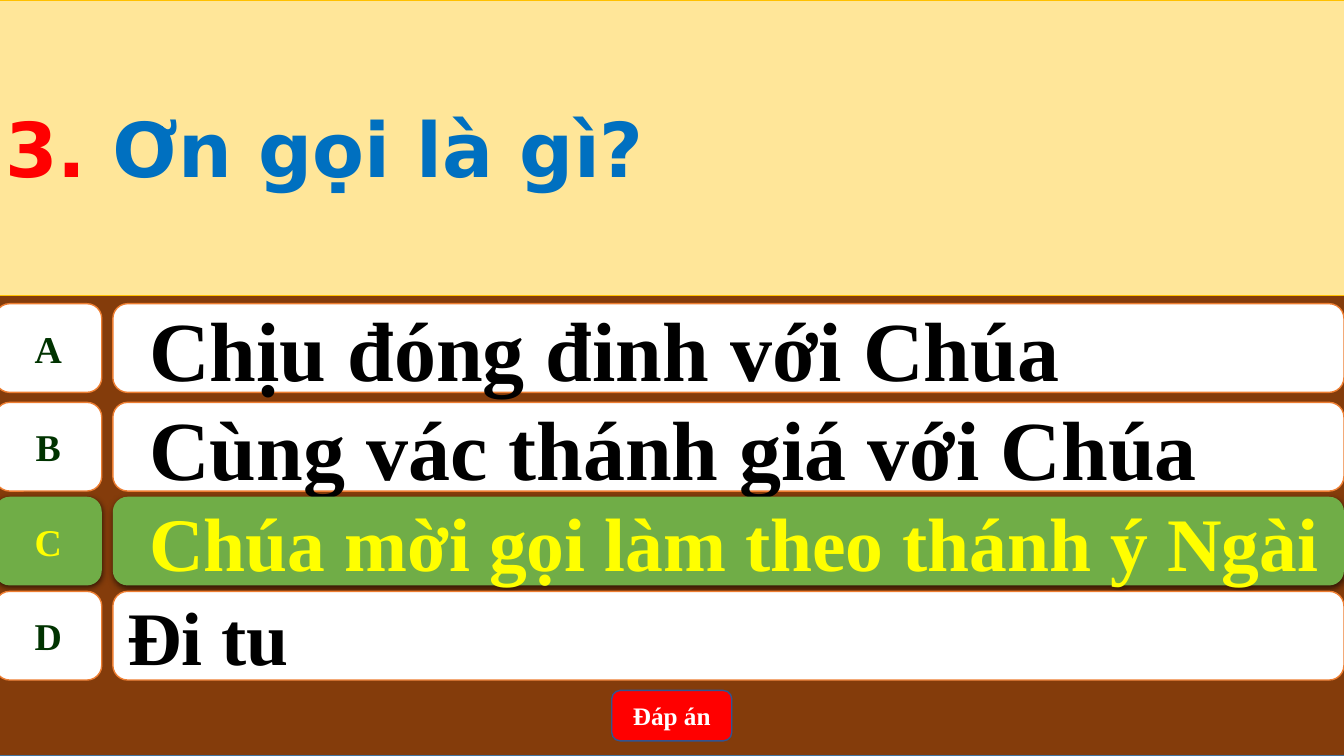
from pptx import Presentation
from pptx.dml.color import RGBColor
from pptx.enum.shapes import MSO_SHAPE
from pptx.enum.text import MSO_ANCHOR, MSO_AUTO_SIZE, PP_ALIGN
from pptx.oxml import parse_xml
from pptx.oxml.ns import nsdecls
from pptx.util import Pt

RECT = MSO_SHAPE.RECTANGLE
ROUNDED = MSO_SHAPE.ROUNDED_RECTANGLE
BADGE = MSO_SHAPE.FLOWCHART_ALTERNATE_PROCESS
MIDDLE = MSO_ANCHOR.MIDDLE
NO_AUTOFIT = MSO_AUTO_SIZE.NONE
LEFT, CENTER, JUSTIFY = PP_ALIGN.LEFT, PP_ALIGN.CENTER, PP_ALIGN.JUSTIFY

SERIF, SANS = "Times New Roman", "DejaVu Sans"
PLAIN = {"fill": "FFFFFF", "line": "ED7D31", "letter": "003300", "answer": "000000"}
CORRECT = {"fill": "70AD47", "line": None, "letter": "FFFF00", "answer": "FFFF00"}
BOARD_LEFT, BOARD_WIDTH = -3.6, 964
BADGE_WIDTH, ANSWER_OFFSET, ROW_HEIGHT = 76.3, 84.25, 63.36
ANSWERS = [
    ("A", "Chịu đóng đinh với Chúa", 216.9, 60, True, PLAIN),
    ("B", "Cùng vác thánh giá với Chúa", 287.4, 60, True, PLAIN),
    ("C", "Chúa mời gọi làm theo thánh ý Ngài", 354.8, 54, True, CORRECT),
    ("D", "Đi tu", 422.4, 54, False, PLAIN),
]


def rgb(hex_code):
    """Return the colour for a hex string."""
    return RGBColor.from_string(hex_code)


def apply_format(target, values):
    """Set every attribute in values on the target."""
    for name, value in values.items():
        setattr(target, name, value)


def paint(shape, fill, line, line_width=1):
    """Give a shape a solid fill and a line, or no line."""
    shape.fill.solid()
    shape.fill.fore_color.rgb = rgb(fill)
    if line is None:
        shape.line.fill.background()
    else:
        shape.line.color.rgb = rgb(line)
        shape.line.width = Pt(line_width)


def add_panel(shapes, kind, box, fill, line):
    """Add a painted preset shape without a shadow."""
    panel = shapes.add_shape(kind, *(Pt(length) for length in box))
    panel.shadow.inherit = False
    paint(panel, fill, line)
    return panel


def write(shape, runs, size, font, align=CENTER, wrap=True):
    """Write bold coloured runs into a shape and return the paragraph."""
    apply_format(shape.text_frame, {"word_wrap": wrap, "vertical_anchor": MIDDLE,
                                    "auto_size": NO_AUTOFIT})
    paragraph = shape.text_frame.paragraphs[0]
    paragraph.alignment = align
    for text, color in runs:
        run = paragraph.add_run()
        run.text = text
        apply_format(run.font, {"name": font, "size": Pt(size), "bold": True})
        run.font.color.rgb = rgb(color)
    return paragraph


def add_soft_shadow(shape):
    """Replace the empty effect list with a soft shadow below the shape."""
    properties = shape.element.spPr
    properties.remove(properties.find("{*}effectLst"))
    properties.append(parse_xml(
        f'<a:effectLst {nsdecls("a")}><a:outerShdw blurRad="{Pt(4.5)}" dist="{Pt(1.5)}" '
        'dir="5400000" algn="ctr" rotWithShape="0"><a:srgbClr val="000000">'
        '<a:alpha val="63000"/></a:srgbClr></a:outerShdw></a:effectLst>'))


def add_question(slide, left, top, width, height):
    """Place the question band in the title placeholder."""
    question = slide.shapes.title
    apply_format(question, {"left": Pt(left), "top": Pt(top),
                            "width": Pt(width), "height": Pt(height)})
    paint(question, "FFE699", "FFC000", 0.5)
    write(question, [("3. ", "FF0000"), ("Ơn gọi là gì?", "0070C0")], 54, SANS, JUSTIFY)


def add_answer_row(slide, left, top, width, height, letter, answer, size, indented, colors):
    """Place one grouped row with a letter badge and an answer bar."""
    row = slide.shapes.add_group_shape().shapes
    bar = add_panel(row, ROUNDED, (left + ANSWER_OFFSET, top, width - ANSWER_OFFSET, height),
                    colors["fill"], colors["line"])
    badge = add_panel(row, BADGE, (left, top, BADGE_WIDTH, height),
                      colors["fill"], colors["line"])
    paragraph = write(bar, [(answer, colors["answer"])], size, SERIF, LEFT)
    write(badge, [(letter, colors["letter"])], 27, SERIF, wrap=False)
    if indented:
        paragraph.level = 1
        indents = paragraph._p.get_or_add_pPr()
        indents.set("marL", str(Pt(36)))
        indents.set("indent", str(Pt(-20.25)))
    if colors is CORRECT:
        for part in (bar, badge):
            add_soft_shadow(part)


def add_reveal_button(slide, left, top, width, height):
    """Place the button that names the solution."""
    button = add_panel(slide.shapes, ROUNDED, (left, top, width, height), "FF0000", "325491")
    write(button, [("Đáp án", "FFFFFF")], 18, SERIF)


def build_quiz_slide(deck):
    """Build the quiz slide from its board, question, answers and button."""
    slide = deck.slides.add_slide(deck.slide_layouts[5])
    board = add_panel(slide.shapes, RECT, (BOARD_LEFT, 0, BOARD_WIDTH, 540), "843C0B", "43739E")
    slide.shapes.title.element.addprevious(board.element)
    add_question(slide, BOARD_LEFT, 0, BOARD_WIDTH, 211)
    for letter, answer, top, size, indented, colors in ANSWERS:
        add_answer_row(slide, BOARD_LEFT, top, 960 - BOARD_LEFT, ROW_HEIGHT,
                       letter, answer, size, indented, colors)
    add_reveal_button(slide, 437, 493.2, 85.7, 36)


def main():
    """Create the deck and save it."""
    deck = Presentation()
    apply_format(deck, {"slide_width": Pt(960), "slide_height": Pt(540)})
    build_quiz_slide(deck)
    deck.save("out.pptx")


if __name__ == "__main__":
    main()
